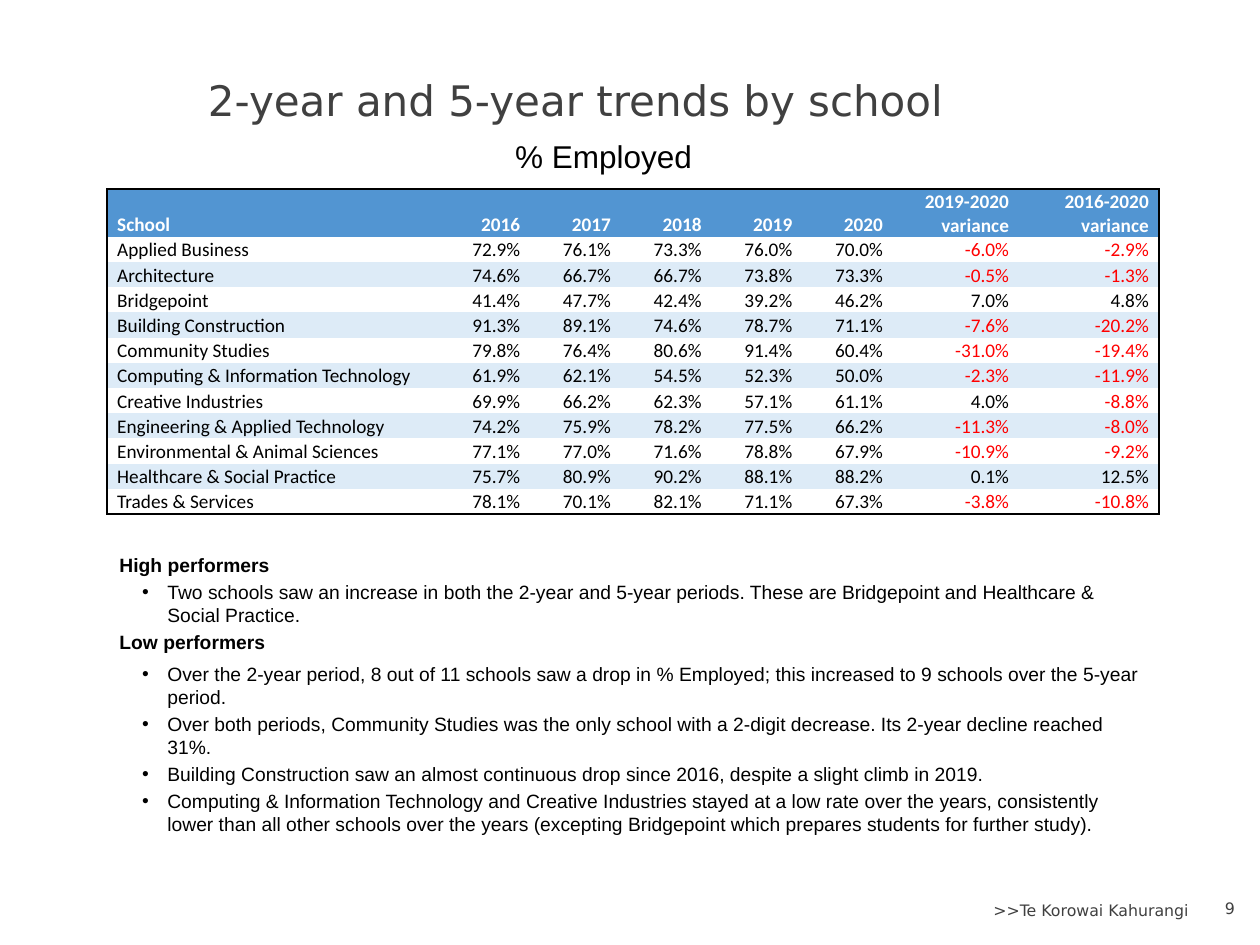
import pptx
import pptx.util
from lxml import etree
from pptx.dml.color import RGBColor
from pptx.enum.text import MSO_ANCHOR, PP_ALIGN
from pptx.oxml.ns import qn
from pptx.util import Inches, Pt

BLACK = RGBColor(0x00, 0x00, 0x00)
WHITE = RGBColor(0xFF, 0xFF, 0xFF)
GREY = RGBColor(0x40, 0x40, 0x40)
RED = RGBColor(0xFF, 0x00, 0x00)
HEADER_BLUE = RGBColor(0x52, 0x95, 0xD2)
BAND_BLUE = RGBColor(0xDD, 0xEB, 0xF7)
NO_STYLE = "{2D5ABB26-0587-4C30-8999-92F81FD0307C}"

TITLE = "2-year and 5-year trends by school"
SUBTITLE = "% Employed"
FOOTER = ">>Te Korowai Kahurangi"
PAGE = "9"

HEADER = ["School", "2016", "2017", "2018", "2019", "2020",
          "2019-2020 variance", "2016-2020 variance"]
COL_WIDTHS = [2.64] + [0.72] * 5 + [1, 1.11]
HEADER_HEIGHT, ROW_HEIGHT = 0.38, 0.2
SCHOOLS = [
    ("Applied Business", 72.9, 76.1, 73.3, 76.0, 70.0, -6.0, -2.9),
    ("Architecture", 74.6, 66.7, 66.7, 73.8, 73.3, -0.5, -1.3),
    ("Bridgepoint", 41.4, 47.7, 42.4, 39.2, 46.2, 7.0, 4.8),
    ("Building Construction", 91.3, 89.1, 74.6, 78.7, 71.1, -7.6, -20.2),
    ("Community Studies", 79.8, 76.4, 80.6, 91.4, 60.4, -31.0, -19.4),
    ("Computing & Information Technology", 61.9, 62.1, 54.5, 52.3, 50.0, -2.3, -11.9),
    ("Creative Industries", 69.9, 66.2, 62.3, 57.1, 61.1, 4.0, -8.8),
    ("Engineering & Applied Technology", 74.2, 75.9, 78.2, 77.5, 66.2, -11.3, -8.0),
    ("Environmental & Animal Sciences", 77.1, 77.0, 71.6, 78.8, 67.9, -10.9, -9.2),
    ("Healthcare & Social Practice", 75.7, 80.9, 90.2, 88.1, 88.2, 0.1, 12.5),
    ("Trades & Services", 78.1, 70.1, 82.1, 71.1, 67.3, -3.8, -10.8),
]

FINDINGS = [
    ("High performers", [
        "Two schools saw an increase in both the 2-year and 5-year periods. "
        "These are Bridgepoint and Healthcare & Social Practice.",
    ]),
    ("Low performers", [
        "Over the 2-year period, 8 out of 11 schools saw a drop in % Employed; "
        "this increased to 9 schools over the 5-year period.",
        "Over both periods, Community Studies was the only school with a 2-digit "
        "decrease. Its 2-year decline reached 31%.",
        "Building Construction saw an almost continuous drop since 2016, "
        "despite a slight climb in 2019.",
        "Computing & Information Technology and Creative Industries stayed at a low "
        "rate over the years, consistently lower than all other schools over the "
        "years (excepting Bridgepoint which prepares students for further study).",
    ]),
]


def add_run(p, text, size, font, color, bold=False):
    r = p.add_run()
    r.text = text
    r.font.size, r.font.name, r.font.bold = Pt(size), font, bold
    r.font.color.rgb = color


def add_text_box(s, left, top, width, height):
    tf = s.shapes.add_textbox(Inches(left), Inches(top), Inches(width), Inches(height)).text_frame
    tf.word_wrap = True
    return tf


def add_bullet(p):
    pPr = p._p.get_or_add_pPr()
    pPr.set("marL", str(Inches(0.38)))
    pPr.set("indent", str(Inches(-0.2)))
    etree.SubElement(pPr, qn("a:buFont"), typeface="Arial")
    etree.SubElement(pPr, qn("a:buChar"), char="•")


def add_borders(cell, sides):
    """Draw 1 pt black lines on the given sides, a subset of "LRTB" in that order."""
    tcPr = cell._tc.get_or_add_tcPr()
    for i, side in enumerate(sides):
        ln = etree.Element(qn(f"a:ln{side}"), w=str(Pt(1)))
        fill = etree.SubElement(ln, qn("a:solidFill"))
        etree.SubElement(fill, qn("a:srgbClr"), val=str(BLACK))
        tcPr.insert(i, ln)


def add_school_table(s):
    rows, cols = len(SCHOOLS) + 1, len(HEADER)
    frame = s.shapes.add_table(rows, cols, Inches(0.85), Inches(1.5), Inches(sum(COL_WIDTHS)),
                               Inches(HEADER_HEIGHT + ROW_HEIGHT * len(SCHOOLS)))
    table = frame.table
    table.horz_banding = False
    table._tbl.tblPr.find(qn("a:tableStyleId")).text = NO_STYLE
    for column, width in zip(table.columns, COL_WIDTHS):
        column.width = Inches(width)
    for i, values in enumerate([HEADER] + SCHOOLS):
        table.rows[i].height = Inches(ROW_HEIGHT if i else HEADER_HEIGHT)
        for j, value in enumerate(values):
            cell = table.cell(i, j)
            cell.vertical_anchor = MSO_ANCHOR.BOTTOM
            cell.margin_left = cell.margin_right = Inches(0.08)
            cell.margin_top, cell.margin_bottom = Inches(0.01), 0
            if i == 0 or i % 2 == 0:
                cell.fill.solid()
                cell.fill.fore_color.rgb = BAND_BLUE if i else HEADER_BLUE
            else:
                cell.fill.background()
            edges = {"L": j == 0, "R": j == cols - 1, "T": i == 0, "B": i == rows - 1}
            add_borders(cell, [side for side, outer in edges.items() if outer])
            is_number = isinstance(value, float)
            color = WHITE if i == 0 else RED if is_number and value < 0 else BLACK
            p = cell.text_frame.paragraphs[0]
            p.alignment = PP_ALIGN.RIGHT if j else PP_ALIGN.LEFT
            add_run(p, f"{value:.1f}%" if is_number else value, 11, "Calibri", color, i == 0)


def add_findings(s):
    tf = add_text_box(s, 0.85, 4.34, 8.37, 2.57)
    lines = [(text, text == heading) for heading, points in FINDINGS
             for text in [heading] + points]
    for i, (text, is_heading) in enumerate(lines):
        p = tf.add_paragraph() if i else tf.paragraphs[0]
        if i:
            p.space_before = Pt(2.2)
        if is_heading and i:
            p.space_after = Pt(3)
        if not is_heading:
            add_bullet(p)
        add_run(p, text, 11, "Arial", BLACK, is_heading)


def main():
    prs = pptx.Presentation()
    prs.slide_width, prs.slide_height = Inches(10), Inches(7.5)
    s = prs.slides.add_slide(prs.slide_layouts[5])

    title = s.shapes.title
    title.left, title.top, title.width, title.height = map(Inches, (1.55, 0.51, 7.87, 0.56))
    title.text_frame.vertical_anchor = MSO_ANCHOR.MIDDLE
    p = title.text_frame.paragraphs[0]
    p.alignment = PP_ALIGN.LEFT
    add_run(p, TITLE, 24, "DejaVu Sans", GREY)

    tf = add_text_box(s, 3.99, 1.04, 1.94, 0.4)
    add_run(tf.paragraphs[0], SUBTITLE, 18, "Arial", BLACK)
    add_school_table(s)
    add_findings(s)

    for text, box in [(FOOTER, (5.38, 7.1, 4.15, 0.25)), (PAGE, (9.44, 7.08, 0.46, 0.25))]:
        tf = add_text_box(s, *box)
        tf.vertical_anchor = MSO_ANCHOR.MIDDLE
        tf.paragraphs[0].alignment = PP_ALIGN.RIGHT
        add_run(tf.paragraphs[0], text, 9, "DejaVu Sans", GREY)

    prs.save("out.pptx")


if __name__ == "__main__":
    main()
